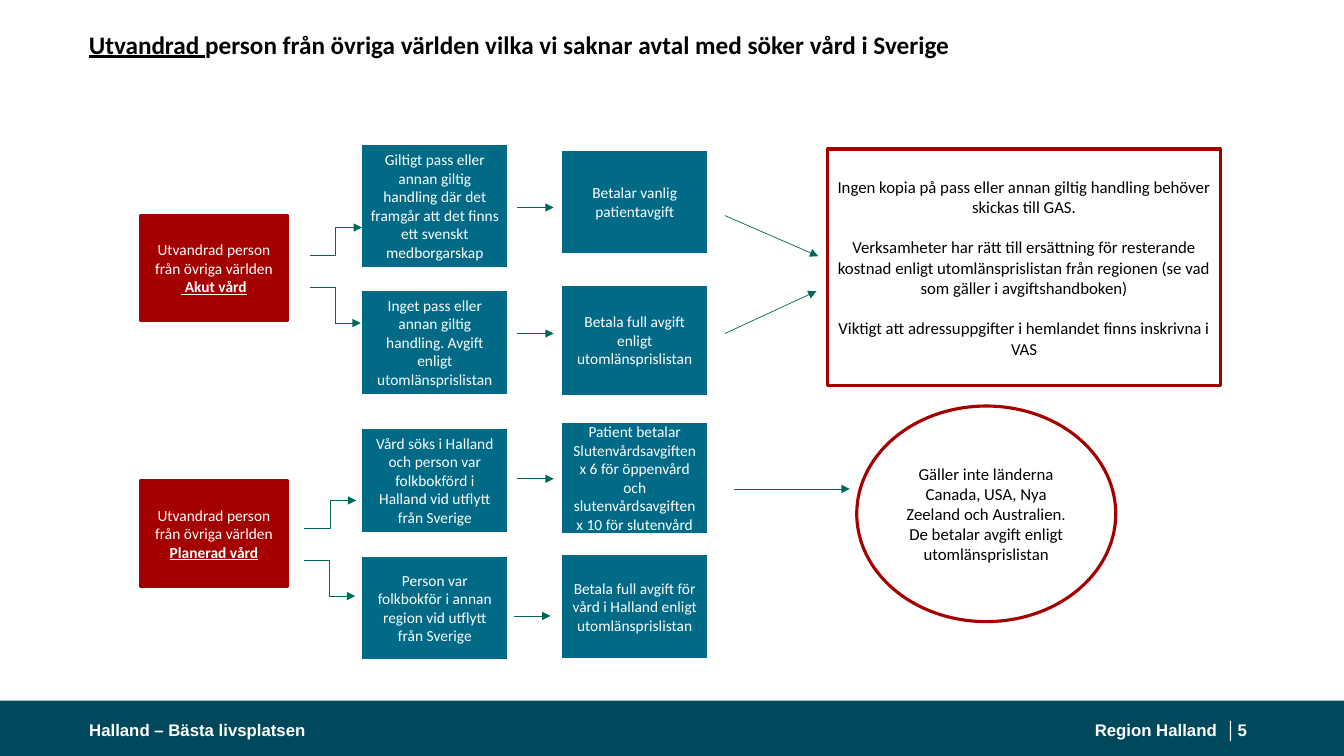
from pptx import Presentation
from pptx.dml.color import RGBColor
from pptx.enum.shapes import MSO_CONNECTOR, MSO_SHAPE
from pptx.enum.text import MSO_ANCHOR, PP_ALIGN
from pptx.oxml.ns import qn
from pptx.util import Pt
from lxml.etree import SubElement

WHITE = RGBColor(0xFF, 0xFF, 0xFF)
BLACK = RGBColor(0, 0, 0)
RED = RGBColor(0xA4, 0, 0)
BLUE = RGBColor(0, 0x6A, 0x87)
GREEN = RGBColor(0, 0x68, 0x58)
BAND = RGBColor(0, 0x49, 0x5D)

COLUMN_LEFTS = {"start": 100, "condition": 257.75, "fee": 400.5}
BOX_WIDTH = 105.75
PLAIN = {"name": "Calibri", "size": Pt(11)}
BODY = {"name": "Calibri", "size": Pt(12)}
FOOTER = {"name": "Arial", "size": Pt(12), "bold": True}
TITLE = {"name": "Calibri", "size": Pt(18), "bold": True}
MARKED = {"bold": True, "underline": True}
NO_INSETS = {"margin_left": 0, "margin_right": 0, "margin_top": 0, "margin_bottom": 0}


def apply_format(target, values):
    for name, value in values.items():
        setattr(target, name, value)


def add_span(para, text, values, color):
    span = para.add_run()
    span.text = text
    apply_format(span.font, values)
    span.font.color.rgb = color


def place(box, left, top, width, height):
    apply_format(box, {"left": Pt(left), "top": Pt(top),
                       "width": Pt(width), "height": Pt(height)})


def add_box(page, bounds, fill, line, line_width=2, shape=MSO_SHAPE.RECTANGLE):
    box = page.shapes.add_shape(shape, *map(Pt, bounds))
    box.shadow.inherit = False
    if fill is None:
        box.fill.background()
    else:
        box.fill.solid()
        box.fill.fore_color.rgb = fill
    if line is None:
        box.line.fill.background()
    else:
        box.line.color.rgb = line
        box.line.width = Pt(line_width)
    apply_format(box.text_frame, {"word_wrap": True, "vertical_anchor": MSO_ANCHOR.MIDDLE})
    return box


def fill_paragraphs(box, texts, values, color, gap=0):
    frame = box.text_frame
    for index, text in enumerate(texts):
        para = frame.add_paragraph() if index else frame.paragraphs[0]
        para.alignment = PP_ALIGN.CENTER
        if index and gap:
            para.space_before = Pt(gap)
        add_span(para, text, values, color)


def add_start(page, top, care):
    box = add_box(page, (COLUMN_LEFTS["start"], top, BOX_WIDTH, 75.5), RED, RED)
    fill_paragraphs(box, ["Utvandrad person från övriga världen"], PLAIN, WHITE)
    para = box.text_frame.paragraphs[0]
    para.add_line_break()
    add_span(para, care, PLAIN | MARKED, WHITE)


def add_step(page, column, top, height, text):
    box = add_box(page, (COLUMN_LEFTS[column], top, BOX_WIDTH, height), BLUE, WHITE)
    fill_paragraphs(box, [text], PLAIN, WHITE)


def add_arrow(page, start, end, kind=MSO_CONNECTOR.STRAIGHT):
    arrow = page.shapes.add_connector(kind, *map(Pt, start + end))
    arrow.line.color.rgb = GREEN
    arrow.line.width = Pt(0.5)
    SubElement(arrow.line._get_or_add_ln(), qn("a:tailEnd"), type="triangle")
    SubElement(arrow._element.spPr, qn("a:effectLst"))


def add_footer_text(page, left, width, text, alignment=PP_ALIGN.LEFT):
    box = page.shapes.add_textbox(Pt(left), Pt(508.5), Pt(width), Pt(25))
    apply_format(box.text_frame, NO_INSETS | {"word_wrap": True,
                                              "vertical_anchor": MSO_ANCHOR.MIDDLE})
    para = box.text_frame.paragraphs[0]
    para.alignment = alignment
    add_span(para, text, FOOTER, WHITE)


def set_title(page):
    title = page.shapes.title
    place(title, 63.5, 6.5, 834, 52.5)
    apply_format(title.text_frame, NO_INSETS | {"vertical_anchor": MSO_ANCHOR.MIDDLE})
    para = title.text_frame.paragraphs[0]
    apply_format(para, {"alignment": PP_ALIGN.LEFT, "line_spacing": 0.9})
    add_span(para, "Utvandrad ", TITLE | {"underline": True}, BLACK)
    add_span(para, "person från övriga världen vilka vi saknar avtal med söker vård i Sverige",
             TITLE, BLACK)


def main():
    deck = Presentation()
    deck.slide_width, deck.slide_height = Pt(960), Pt(540)
    page = deck.slides.add_slide(deck.slide_layouts[5])
    set_title(page)

    # Footer band
    add_box(page, (0, 500.5, 960, 39.5), BAND, None)
    add_footer_text(page, 770.5, 113, "Region Halland  │", PP_ALIGN.RIGHT)
    add_footer_text(page, 63.75, 324, "Halland – Bästa livsplatsen")
    add_footer_text(page, 884, 17.5, "5")

    # Starting points
    add_start(page, 153.75, " Akut vård")
    add_start(page, 343.25, "Planerad vård")

    # Conditions and fees
    steps = [
        ("condition", 102.5, 89, "Giltigt pass eller annan giltig handling där det framgår "
                                 "att det finns ett svenskt medborgarskap"),
        ("condition", 206.75, 75.5, "Inget pass eller annan giltig handling. "
                                    "Avgift enligt utomlänsprislistan"),
        ("condition", 305.25, 75.5, "Vård söks i Halland och person var folkbokförd i "
                                    "Halland vid utflytt från Sverige"),
        ("condition", 396.5, 75.5, "Person var folkbokför i annan region vid utflytt "
                                   "från Sverige"),
        ("fee", 106.5, 75.5, "Betalar vanlig patientavgift"),
        ("fee", 203, 80, "Betala full avgift enligt utomlänsprislistan"),
        ("fee", 301.5, 80, "Patient betalar Slutenvårdsavgiften x 6 för öppenvård och "
                           "slutenvårdsavgiften x 10 för slutenvård"),
        ("fee", 395.5, 75.5, "Betala full avgift för vård i Halland enligt "
                             "utomlänsprislistan"),
    ]
    for step in steps:
        add_step(page, *step)

    # Outcomes
    outcome = add_box(page, (591, 106.5, 281, 169), WHITE, RED, 2.25)
    fill_paragraphs(outcome, [
        "Ingen kopia på pass eller annan giltig handling behöver skickas till GAS.",
        "Verksamheter har rätt till ersättning för resterande kostnad enligt "
        "utomlänsprislistan från regionen (se vad som gäller i avgiftshandboken)",
        "Viktigt att adressuppgifter i hemlandet finns inskrivna i VAS",
    ], BODY, BLACK, gap=14.65)
    exception = add_box(page, (612, 290, 185, 154), None, RED, 2.25, MSO_SHAPE.OVAL)
    fill_paragraphs(exception, [
        "Gäller inte länderna Canada, USA, Nya Zeeland och Australien. ",
        "De betalar avgift enligt utomlänsprislistan",
    ], BODY, BLACK)

    # Arrows from condition to fee
    for left, top in [(369.5, 148.25), (369.5, 238.25), (369.5, 342), (367.25, 440)]:
        add_arrow(page, (left, top), (left + 26, top))

    # Arrows from fee to outcome
    add_arrow(page, (517.75, 154), (584.5, 183))
    add_arrow(page, (517.75, 238.25), (583.25, 208))
    add_arrow(page, (524.25, 349.25), (607, 349.25))

    # Branches from each starting point
    for left, top in [(221.25, 182.25), (217.25, 377.25)]:
        add_arrow(page, (left, top), (left + 37.25, top - 19.75), MSO_CONNECTOR.ELBOW)
        add_arrow(page, (left, top + 23), (left + 36.5, top + 48.5), MSO_CONNECTOR.ELBOW)

    deck.save("out.pptx")


if __name__ == "__main__":
    main()
